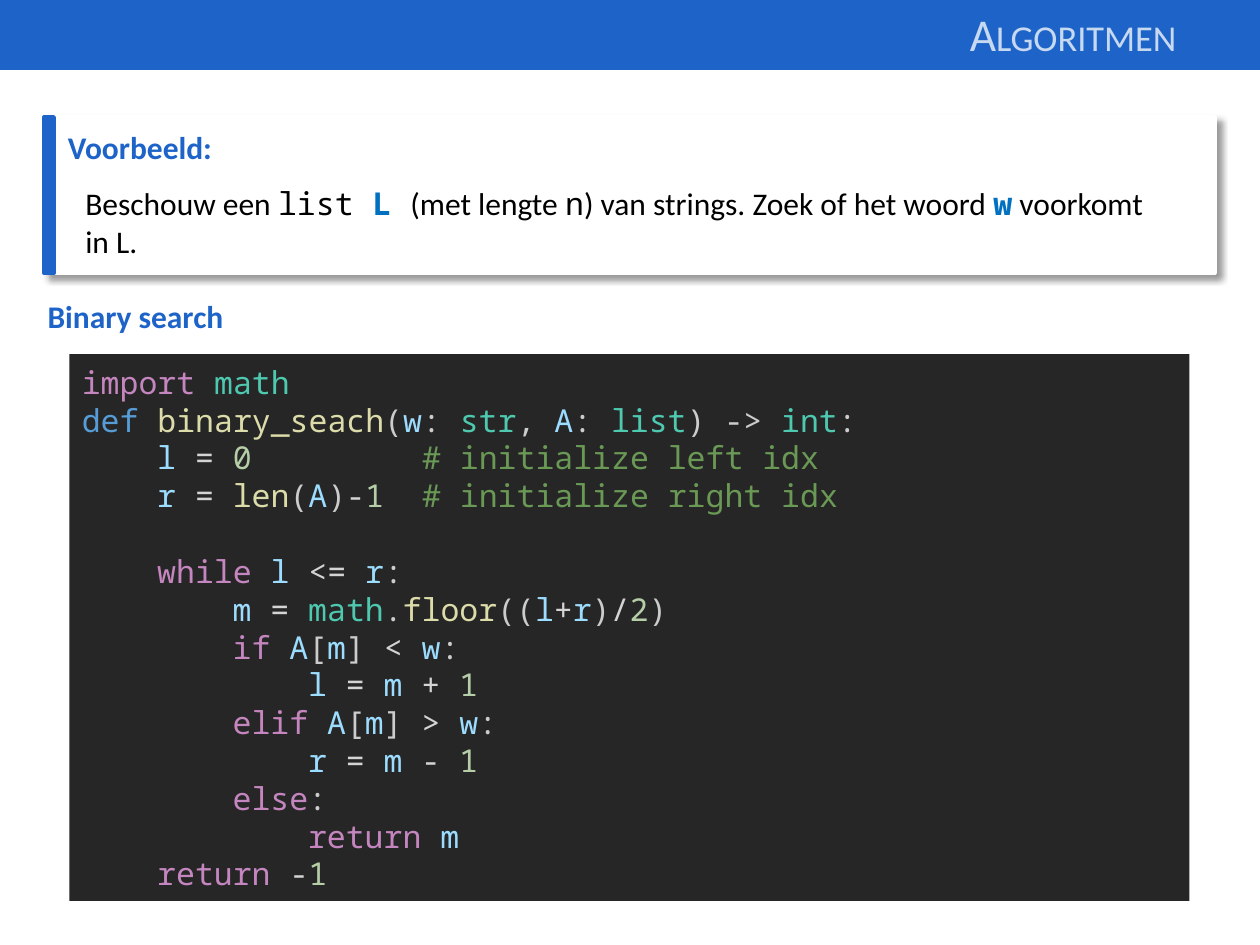
import itertools
from typing import NamedTuple

import pptx
import pptx.dml.color
import pptx.enum.shapes
import pptx.enum.text
import pptx.oxml
import pptx.oxml.ns
import pptx.util
from pptx.util import Cm

COLORS = {
    "blue": "1E64C8", "title": "C6D9F1", "white": "FFFFFF", "black": "000000",
    "accent": "0070C0", "editor": "262626",
    "keyword": "C586C0", "type": "4EC9B0", "definition": "569CD6",
    "function": "DCDCAA", "variable": "9CDCFE", "number": "B5CEA8",
    "operator": "D4D4D4", "punctuation": "CCCCCC", "comment": "6A9955",
}
SANS, MONO = "Calibri", "Noto Sans Mono"
INDENT = Cm(1.52)          # four monospaced characters
COMMENT_COLUMN = Cm(6.86)  # eighteen monospaced characters
LINE_PITCH = pptx.util.Pt(21.8)

TOKEN_ROLES = {
    **dict.fromkeys(["import", "while", "if", "elif", "else", "return"], "keyword"),
    **dict.fromkeys(["math", "str", "list", "int"], "type"),
    **dict.fromkeys(["binary_seach", "len", "floor"], "function"),
    "def": "definition",
    "->": "punctuation",
}


class Box(NamedTuple):
    left: float
    top: float
    width: float
    height: float

    def lengths(self) -> list:
        return [Cm(value) for value in self]


class Piece(NamedTuple):
    text: str
    color: str = "black"
    font: str = SANS
    bold: bool = False
    size: int = 18


class CodeLine(NamedTuple):
    depth: int
    code: str
    comment: str = ""
    gap_before: bool = False


CODE = [
    CodeLine(0, "import math"),
    CodeLine(0, "def binary_seach(w: str, A: list) -> int:"),
    CodeLine(1, "l = 0", "# initialize left idx"),
    CodeLine(1, "r = len(A)-1", "# initialize right idx"),
    CodeLine(1, "while l <= r:", gap_before=True),
    CodeLine(2, "m = math.floor((l+r)/2)"),
    CodeLine(2, "if A[m] < w:"),
    CodeLine(3, "l = m + 1"),
    CodeLine(2, "elif A[m] > w:"),
    CodeLine(3, "r = m - 1"),
    CodeLine(2, "else:"),
    CodeLine(3, "return m"),
    CodeLine(1, "return -1"),
]


def rgb(name: str) -> pptx.dml.color.RGBColor:
    return pptx.dml.color.RGBColor.from_string(COLORS[name])


def add_rectangle(shapes, box: Box, fill: str, outlined: bool = True):
    shape = shapes.add_shape(pptx.enum.shapes.MSO_SHAPE.RECTANGLE, *box.lengths())
    shape.shadow.inherit = False
    shape.fill.solid()
    shape.fill.fore_color.rgb = rgb(fill)
    if outlined:
        shape.line.color.rgb = rgb(fill)
        shape.line.width = pptx.util.Pt(2)
    else:
        shape.line.fill.background()
    return shape


def add_drop_shadow(shape) -> None:
    effects = shape._element.spPr.find(pptx.oxml.ns.qn("a:effectLst"))
    effects.append(pptx.oxml.parse_xml(
        f'<a:outerShdw {pptx.oxml.ns.nsdecls("a")} blurRad="50800" dist="38100" '
        f'dir="2700000" algn="tl" rotWithShape="0"><a:srgbClr val="{COLORS["black"]}">'
        '<a:alpha val="40000"/></a:srgbClr></a:outerShdw>'))


def write_pieces(paragraph, pieces: list[Piece]) -> None:
    paragraph.alignment = pptx.enum.text.PP_ALIGN.LEFT
    for piece in pieces:
        run = paragraph.add_run()
        run.text = piece.text
        run.font.name = piece.font
        run.font.size = pptx.util.Pt(piece.size)
        run.font.bold = piece.bold
        run.font.color.rgb = rgb(piece.color)


def add_text(shapes, box: Box, pieces: list[Piece]):
    text_box = shapes.add_textbox(*box.lengths())
    text_box.text_frame.word_wrap = True
    paragraph = text_box.text_frame.paragraphs[0]
    write_pieces(paragraph, pieces)
    return paragraph


def character_class(character: str) -> str:
    if character.isalnum() or character == "_":
        return "word"
    return "operator" if character in "=<>+-/" else "punctuation"


def highlight(code: str) -> list[Piece]:
    pieces = []
    for kind, characters in itertools.groupby(code, character_class):
        token = "".join(characters)
        role = kind
        if kind == "word":
            role = "number" if token.isdigit() else "variable"
        pieces.append(Piece(token, TOKEN_ROLES.get(token, role), MONO))
    return pieces


def set_tab_stops(paragraph, positions: list[int]) -> None:
    stops = "".join(f'<a:tab pos="{position}" algn="l"/>' for position in positions)
    paragraph._p.get_or_add_pPr().append(pptx.oxml.parse_xml(
        f'<a:tabLst {pptx.oxml.ns.nsdecls("a")}>{stops}</a:tabLst>'))


def write_code_line(paragraph, line: CodeLine) -> None:
    pieces = highlight(line.code)
    stops = []
    if line.depth:
        pieces.insert(0, Piece("\t", "punctuation", MONO))
        stops.append(line.depth * INDENT)
    if line.comment:
        pieces.append(Piece("\t" + line.comment, "comment", MONO))
        stops.append(COMMENT_COLUMN)
    write_pieces(paragraph, pieces)
    if line.gap_before:
        paragraph.space_before = LINE_PITCH
    if stops:
        set_tab_stops(paragraph, stops)


def main() -> None:
    presentation = pptx.Presentation()
    presentation.slide_width, presentation.slide_height = Cm(25.4), Cm(19.05)
    slide = presentation.slides.add_slide(presentation.slide_layouts[6])
    shapes = slide.shapes

    # Title bar
    add_rectangle(shapes, Box(0, 0, 25.4, 1.37), "blue")
    title = add_text(shapes, Box(19.3, 0, 6.1, 1.37),
                     [Piece("Algoritmen", "title", size=26)])
    title.runs[0].font._element.set("cap", "small")

    # Example card
    card = shapes.add_group_shape().shapes
    add_drop_shadow(add_rectangle(card, Box(0.89, 2.36, 23.6, 3.15), "white"))
    add_rectangle(card, Box(0.89, 2.36, 0.2, 3.15), "blue")
    add_text(shapes, Box(1.12, 2.46, 15.67, 1.02), [Piece("Voorbeeld:", "blue", bold=True)])
    task = add_text(shapes, Box(1.47, 3.58, 21.84, 1.8), [
        Piece("Beschouw een "),
        Piece("list ", font=MONO),
        Piece("L ", "accent", MONO, True),
        Piece("(met lengte "),
        Piece("n", font=MONO),
        Piece(") van strings. Zoek of het woord "),
        Piece("w", "accent", MONO, True),
        Piece(" voorkomt in L."),
    ])
    task.space_before = task.space_after = pptx.util.Pt(3)

    # Code panel
    panel = add_rectangle(shapes, Box(1.4, 7.14, 22.58, 11.02), "editor", outlined=False)
    frame = panel.text_frame
    frame.word_wrap = True
    frame.vertical_anchor = pptx.enum.text.MSO_ANCHOR.MIDDLE
    for index, line in enumerate(CODE):
        write_code_line(frame.add_paragraph() if index else frame.paragraphs[0], line)

    # Code heading
    add_text(shapes, Box(0.71, 5.87, 12.88, 1.02), [Piece("Binary search", "blue", bold=True)])

    presentation.save("out.pptx")


if __name__ == "__main__":
    main()
